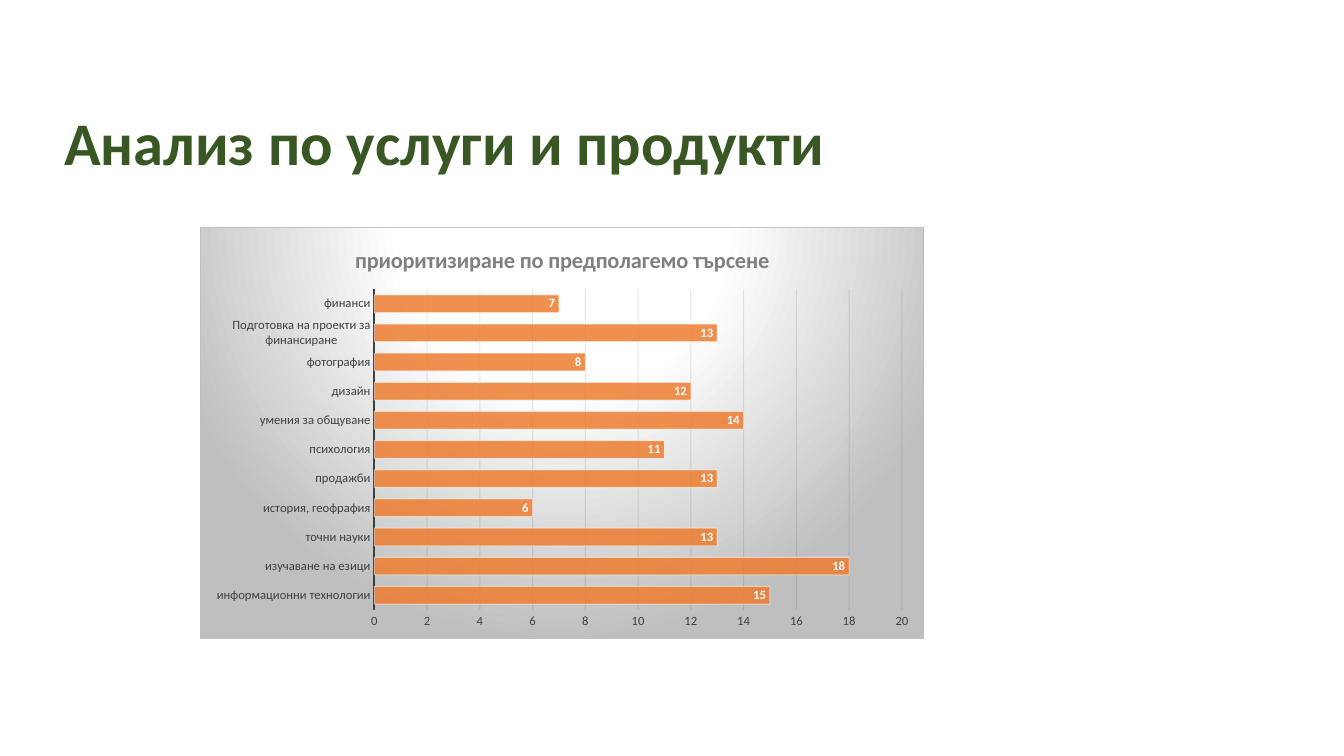
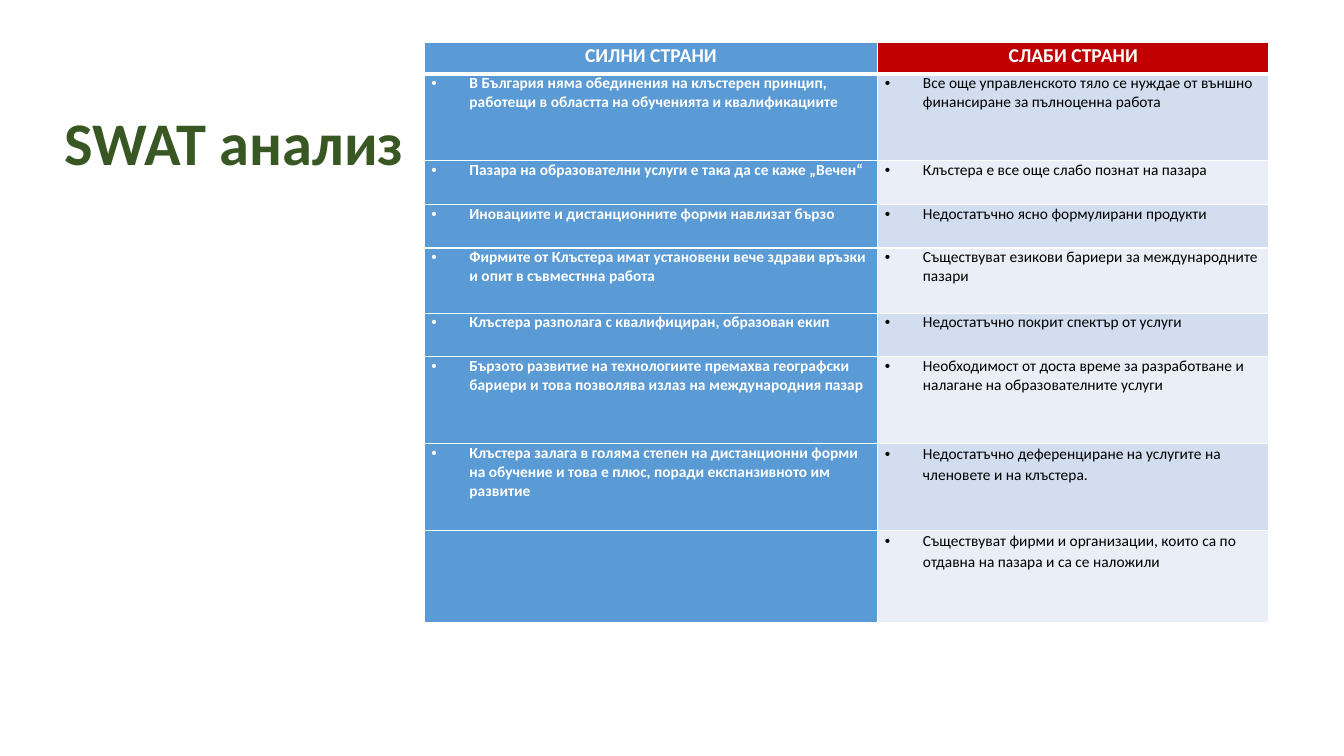
from lxml import etree
from pptx import Presentation
from pptx.chart.data import CategoryChartData
from pptx.dml.color import RGBColor
from pptx.enum.chart import XL_CHART_TYPE, XL_LABEL_POSITION, XL_TICK_MARK
from pptx.enum.text import MSO_ANCHOR, PP_ALIGN
from pptx.oxml import parse_xml
from pptx.oxml.ns import nsdecls, qn
from pptx.util import Cm, Pt

BARS = XL_CHART_TYPE.BAR_CLUSTERED
INSIDE_END = XL_LABEL_POSITION.INSIDE_END
NO_TICK = XL_TICK_MARK.NONE
BOTTOM = MSO_ANCHOR.BOTTOM
CENTER = PP_ALIGN.CENTER

FONT = "Calibri"
GREEN = RGBColor(0x38, 0x57, 0x23)
WHITE = RGBColor(0xFF, 0xFF, 0xFF)
BLACK = RGBColor(0x00, 0x00, 0x00)
GRAY = RGBColor(0x80, 0x80, 0x80)
DARK_GRAY = RGBColor(0x40, 0x40, 0x40)
GRID = RGBColor(0x0D, 0x0D, 0x0D)
ORANGE = RGBColor(0xED, 0x7D, 0x31)
BLUE = RGBColor(0x5B, 0x9B, 0xD5)
RED = RGBColor(0xC0, 0x00, 0x00)
BANDS = [RGBColor(0xD2, 0xDE, 0xEF), RGBColor(0xEA, 0xEF, 0xF7)]

prs = Presentation()
prs.slide_width, prs.slide_height = Cm(33.87), Cm(19.05)


def style_font(font, size, color, bold=False):
    font.name, font.size, font.bold = FONT, Pt(size), bold
    font.color.rgb = color


def set_alpha(color_format_parent, percent):
    for color in color_format_parent.iter(qn("a:srgbClr")):
        etree.SubElement(color, qn("a:alpha")).set("val", str(percent * 1000))


# Both slides with their shared title
slides = []
for heading in ["Анализ по услуги и продукти", "SWAT анализ"]:
    slide = prs.slides.add_slide(prs.slide_layouts[6])
    frame = slide.shapes.add_textbox(Cm(1.37), Cm(2.54), Cm(28.27), Cm(2.08)).text_frame
    frame.word_wrap = True
    frame.vertical_anchor = BOTTOM
    frame.paragraphs[0].line_spacing = 0.9
    run = frame.paragraphs[0].add_run()
    run.text = heading
    style_font(run.font, 43.2, GREEN, True)
    slides.append(slide)
demand_slide, swot_slide = slides

# Slide 1: demand by subject, listed from the bottom up
demand = [
    ("информационни технологии", 15),
    ("изучаване на езици", 18),
    ("точни науки", 13),
    ("история, геофрафия", 6),
    ("продажби", 13),
    ("психология", 11),
    ("умения за общуване", 14),
    ("дизайн", 12),
    ("фотография", 8),
    ("Подготовка на проекти за финансиране", 13),
    ("финанси", 7),
]
data = CategoryChartData()
data.categories = [subject for subject, _ in demand]
data.add_series("Series 1", [score for _, score in demand])
chart = demand_slide.shapes.add_chart(
    BARS, Cm(5.05), Cm(5.72), Cm(18.24), Cm(10.39), data).chart
style_font(chart.font, 10, BLACK)
chart.has_legend = False
chart.has_title = True
run = chart.chart_title.text_frame.paragraphs[0].add_run()
run.text = "приоритизиране по предполагемо търсене"
style_font(run.font, 16, GRAY, True)
chart.chart_title.include_in_layout = False

# Axes and grid
subjects, scores = chart.category_axis, chart.value_axis
for axis in (subjects, scores):
    axis.major_tick_mark = axis.minor_tick_mark = NO_TICK
    style_font(axis.tick_labels.font, 9, DARK_GRAY)
subjects.has_major_gridlines = False
subjects.format.line.color.rgb = DARK_GRAY
subjects.format.line.width = Pt(1.5)
scores.minimum_scale, scores.maximum_scale, scores.major_unit = 0, 20, 2
scores.format.line.fill.background()
grid_line = scores.major_gridlines.format.line
grid_line.color.rgb = GRID
grid_line.width = Pt(0.75)
set_alpha(scores.major_gridlines._xAx.find(qn("c:majorGridlines")), 10)

# Bars and their labels
plot = chart.plots[0]
plot.gap_width = 65
plot.vary_by_categories = False
bars = plot.series[0]
bars.format.fill.solid()
bars.format.fill.fore_color.rgb = ORANGE
bars_look = bars.format.fill._xPr
set_alpha(bars_look, 85)
bars.format.line.color.rgb = WHITE
bars.format.line.width = Pt(0.75)
set_alpha(bars_look.find(qn("a:ln")), 50)
labels = bars.data_labels
labels.show_value = True
labels.position = INSIDE_END
style_font(labels.font, 9, WHITE, True)

# Plot position and the radial background of the chart
chart_xml = chart._chartSpace.find(qn("c:chart"))
plot_area = chart_xml.find(qn("c:plotArea"))
for old_layout in plot_area.findall(qn("c:layout")):
    plot_area.remove(old_layout)
plot_area.insert(0, parse_xml(
    f'<c:layout {nsdecls("c")}><c:manualLayout><c:layoutTarget val="inner"/>'
    '<c:xMode val="edge"/><c:yMode val="edge"/><c:x val="0.24"/><c:y val="0.15"/>'
    '<c:w val="0.73"/><c:h val="0.78"/></c:manualLayout></c:layout>'))
stops = "".join(f'<a:gs pos="{pos}000"><a:srgbClr val="{color}"/></a:gs>'
                for pos, color in [(0, "FFFFFF"), (39, "FFFFFF"), (100, "BFBFBF")])
chart_xml.addnext(parse_xml(
    f'<c:spPr {nsdecls("c", "a")}><a:gradFill><a:gsLst>{stops}</a:gsLst>'
    '<a:path path="circle"><a:fillToRect l="50000" t="-80000" r="50000" b="180000"/></a:path>'
    '</a:gradFill><a:ln w="9525"><a:solidFill><a:srgbClr val="BFBFBF"/></a:solidFill></a:ln>'
    '</c:spPr>'))

# Slide 2: strengths and weaknesses, with row heights in cm
rows = [
    (0.79, "СИЛНИ СТРАНИ", "СЛАБИ СТРАНИ"),
    (2.19, "В България няма обединения на клъстерен принцип, работещи в областта на "
           "обученията и квалификациите",
     "Все още управленското тяло се нуждае от външно финансиране за пълноценна работа"),
    (1.1, "Пазара на образователни услуги е така да се каже „Вечен“",
     "Клъстера е все още слабо познат на пазара"),
    (1.1, "Иновациите и дистанционните форми навлизат бързо",
     "Недостатъчно ясно формулирани продукти"),
    (1.64, "Фирмите от Клъстера имат установени вече здрави връзки и опит в съвместнна работа",
     "Съществуват езикови бариери за международните пазари"),
    (1.1, "Клъстера разполага с квалифициран, образован екип",
     "Недостатъчно покрит спектър от услуги"),
    (2.19, "Бързото развитие на технологиите премахва географски бариери и това позволява "
           "излаз на международния пазар",
     "Необходимост от доста време за разработване и налагане на образователните услуги"),
    (2.19, "Клъстера залага в голяма степен на дистанционни форми на обучение и това е плюс, "
           "поради експанзивното им развитие",
     "Недостатъчно деференциране на услугите на членовете и на клъстера."),
    (2.31, "", "Съществуват фирми и организации, които са по отдавна на пазара и са се наложили"),
]
widths = [11.43, 9.86]
swot = swot_slide.shapes.add_table(
    len(rows), 2, Cm(10.69), Cm(1.07), Cm(sum(widths)), Cm(sum(row[0] for row in rows))).table
swot.horz_banding = False
for column, width in zip(swot.columns, widths):
    column.width = Cm(width)

for r, (height, *texts) in enumerate(rows):
    swot.rows[r].height = Cm(height)
    header = r == 0
    for c, text in enumerate(texts):
        cell = swot.cell(r, c)
        cell.margin_left = cell.margin_right = Cm(0.18)
        cell.margin_top = cell.margin_bottom = 0

        # White borders, thicker between header and body
        for side in ("L", "R", "T", "B"):
            thick = (header and side == "B") or (r == 1 and side == "T")
            cell._tc.get_or_add_tcPr().append(parse_xml(
                f'<a:ln{side} {nsdecls("a")} w="{Pt(3 if thick else 1)}"><a:solidFill>'
                f'<a:srgbClr val="{WHITE}"/></a:solidFill></a:ln{side}>'))
        cell.fill.solid()
        weakness = RED if header else BANDS[(r - 1) % 2]
        cell.fill.fore_color.rgb = weakness if c else BLUE

        if not text:
            continue
        paragraph = cell.text_frame.paragraphs[0]
        run = paragraph.add_run()
        run.text = text
        strong = header or c == 0
        style_font(run.font, 14 if header else 11, WHITE if strong else BLACK, strong)
        if header or (c == 1 and r >= 7):
            paragraph.line_spacing = 1.07
        if header:
            paragraph.alignment = CENTER
        else:
            props = paragraph._p.get_or_add_pPr()
            props.set("marL", str(Cm(0.96)))
            props.set("indent", str(-Cm(0.96)))
            etree.SubElement(props, qn("a:buFont")).set("typeface", "Arial")
            etree.SubElement(props, qn("a:buChar")).set("char", "•")

prs.save("out.pptx")
